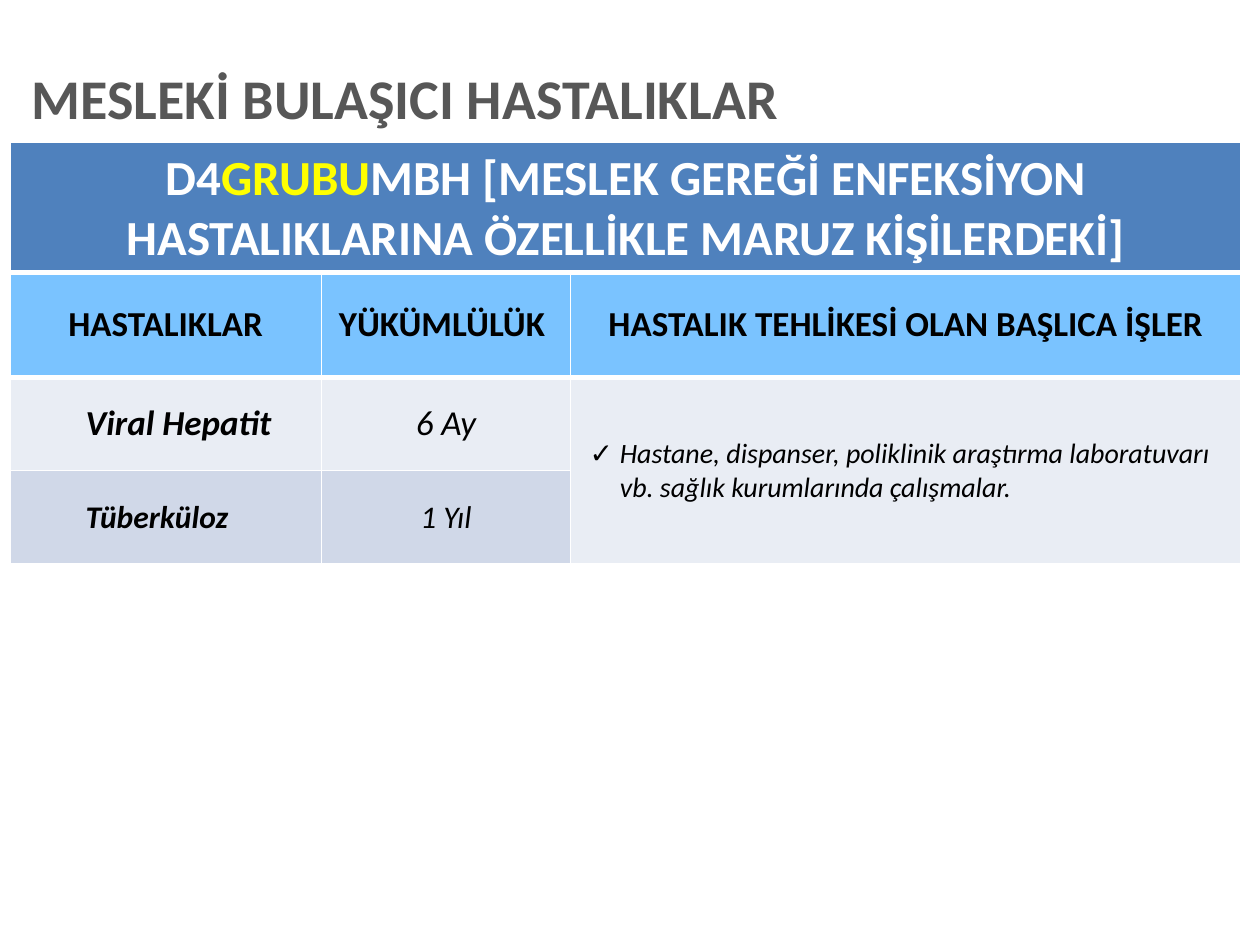
from lxml import etree
from pptx import Presentation
from pptx.dml.color import RGBColor
from pptx.enum.text import MSO_ANCHOR, PP_ALIGN
from pptx.oxml.ns import qn
from pptx.util import Inches, Pt

LEFT, CENTER = PP_ALIGN.LEFT, PP_ALIGN.CENTER
MIDDLE = MSO_ANCHOR.MIDDLE
WIDTH, HEIGHT = Inches(10), Inches(7.5)
FONT = "Calibri"
GREY, WHITE, BLACK, YELLOW = "575757", "FFFFFF", "000000", "FFFF00"
HEADER, SUBHEADER, LIGHT, DARK = "4F81BD", "7AC3FF", "E9EDF4", "D0D8E8"


def color(value):
    return RGBColor.from_string(value)


def across(percent):
    return round(WIDTH * percent / 100)


def down(percent):
    return round(HEIGHT * percent / 100)


def write(frame, spans, size, align=LEFT, bold=True, italic=False):
    """Fill the first paragraph with (text, colour) spans."""
    para = frame.paragraphs[0]
    para.alignment = align
    para.font.name, para.font.size = FONT, Pt(size)
    para.font.bold, para.font.italic = bold, italic
    for text, tint in spans:
        span = para.add_run()
        span.text = text
        span.font.color.rgb = color(tint)
    return para


def indent(para, margin, hanging=0, bullet=None):
    props = para._p.get_or_add_pPr()
    props.set("marL", str(Inches(margin)))
    props.set("indent", str(Inches(hanging)))
    if bullet:
        etree.SubElement(props, qn("a:buFont"), typeface=FONT)
        etree.SubElement(props, qn("a:buChar"), char=bullet)


def style_cell(cell, fill, top=1, bottom=1):
    cell.vertical_anchor = MIDDLE
    cell.fill.solid()
    cell.fill.fore_color.rgb = color(fill)
    props = cell._tc.get_or_add_tcPr()
    sides = [("a:lnL", 1), ("a:lnR", 1), ("a:lnT", top), ("a:lnB", bottom)]
    for place, (side, width) in enumerate(sides):
        line = etree.Element(qn(side), w=str(Pt(width)))
        solid = etree.SubElement(line, qn("a:solidFill"))
        etree.SubElement(solid, qn("a:srgbClr"), val=WHITE)
        props.insert(place, line)


def add_title(page, left, top, width, height):
    box = page.shapes.add_textbox(across(left), down(top), across(width), down(height))
    frame = box.text_frame
    frame.word_wrap = True
    frame.vertical_anchor = MIDDLE
    frame.margin_left = frame.margin_right = 0
    para = write(frame, [("MESLEKİ BULAŞICI HASTALIKLAR", GREY)], 32)
    para.line_spacing = 0.9


def add_disease_table(page, left, top, columns, rows):
    frame = page.shapes.add_table(
        len(rows), len(columns), across(left), down(top),
        across(sum(columns)), down(sum(rows)))
    table = frame.table
    table.first_row = table.horz_banding = False
    for column, width in zip(table.columns, columns):
        column.width = across(width)
    for row, height in zip(table.rows, rows):
        row.height = down(height)

    # Fills and rules for each row
    looks = [(HEADER, 1, 3), (SUBHEADER, 3, 3), (LIGHT, 3, 1), (DARK, 1, 1)]
    for row, look in zip(table.rows, looks):
        for cell in row.cells:
            style_cell(cell, *look)

    # Group heading over all columns
    table.cell(0, 0).merge(table.cell(0, 2))
    write(table.cell(0, 0).text_frame, [
        ("D4", WHITE), ("GRUBU", YELLOW),
        ("MBH [MESLEK GEREĞİ ENFEKSİYON HASTALIKLARINA ÖZELLİKLE MARUZ KİŞİLERDEKİ]", WHITE),
    ], 28, CENTER)

    # Column headings
    headings = ["HASTALIKLAR", "YÜKÜMLÜLÜK ", "HASTALIK TEHLİKESİ OLAN BAŞLICA İŞLER"]
    for index, heading in enumerate(headings):
        write(table.cell(1, index).text_frame, [(heading, BLACK)], 20, CENTER)

    # Diseases and liability periods
    diseases = [("Viral Hepatit", "6 Ay", 20), ("Tüberküloz", "1 Yıl", 18)]
    for index, (disease, period, size) in enumerate(diseases, start=2):
        para = write(table.cell(index, 0).text_frame, [(disease, BLACK)], size, italic=True)
        indent(para, 0.5)
        write(table.cell(index, 1).text_frame, [(period, BLACK)], size, CENTER,
              bold=False, italic=True)

    # Shared list of risky jobs
    jobs = table.cell(2, 2)
    jobs.merge(table.cell(3, 2))
    jobs.margin_left = jobs.margin_right = jobs.margin_top = jobs.margin_bottom = 0
    text = "Hastane, dispanser, poliklinik araştırma laboratuvarı vb. sağlık kurumlarında çalışmalar."
    indent(jobs.text_frame.paragraphs[0], 0.39, -0.24, "✓")
    write(jobs.text_frame, [(text, BLACK)], 16, bold=False, italic=True)


def main():
    deck = Presentation()
    deck.slide_width, deck.slide_height = WIDTH, HEIGHT
    page = deck.slides.add_slide(deck.slide_layouts[6])
    add_title(page, 2.5, 6, 96.4, 9.47)
    add_disease_table(page, 0.8, 15.07, [24.7, 19.8, 53.2], [11.07, 11.07, 9.87, 9.87])
    deck.save("out.pptx")


if __name__ == "__main__":
    main()
